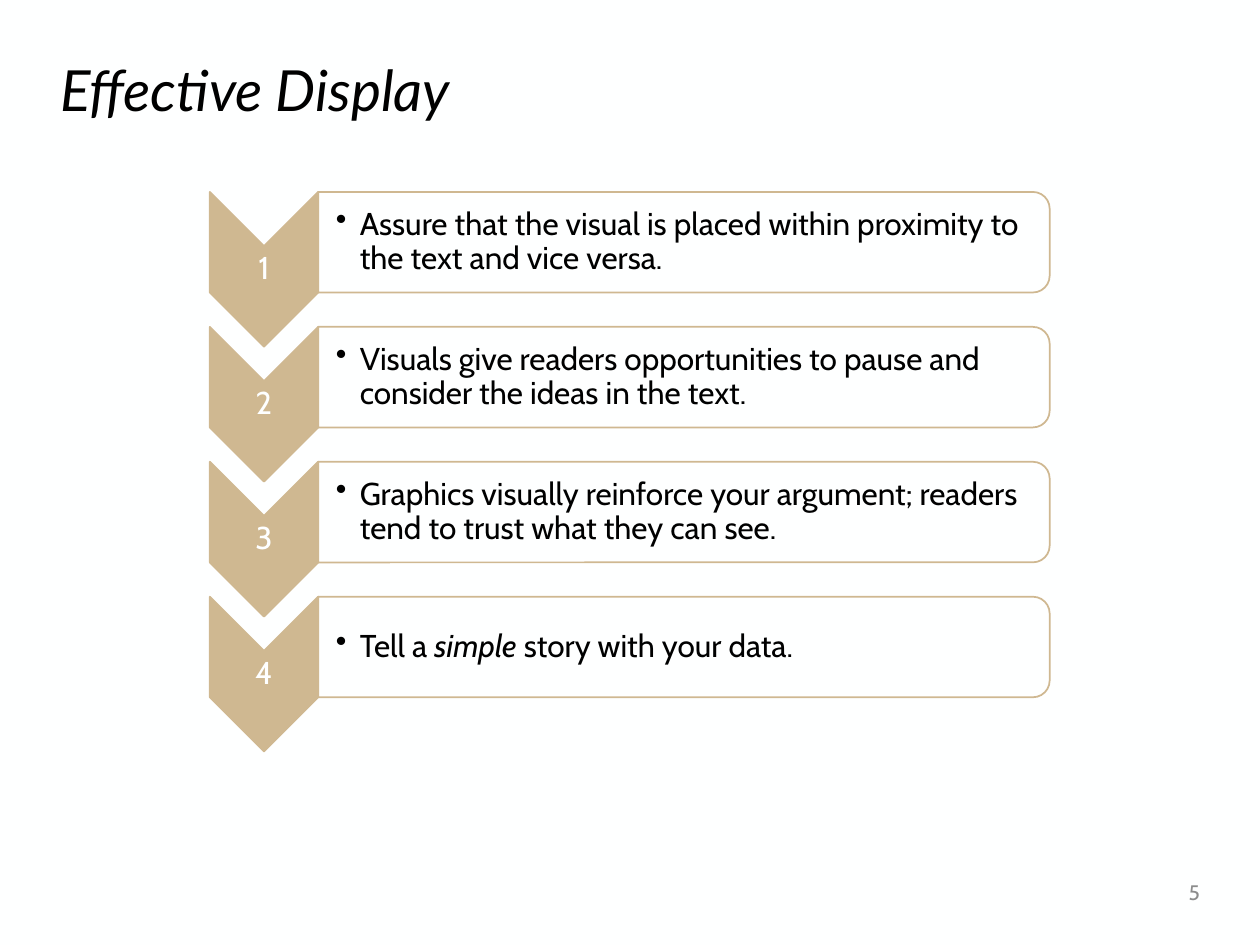
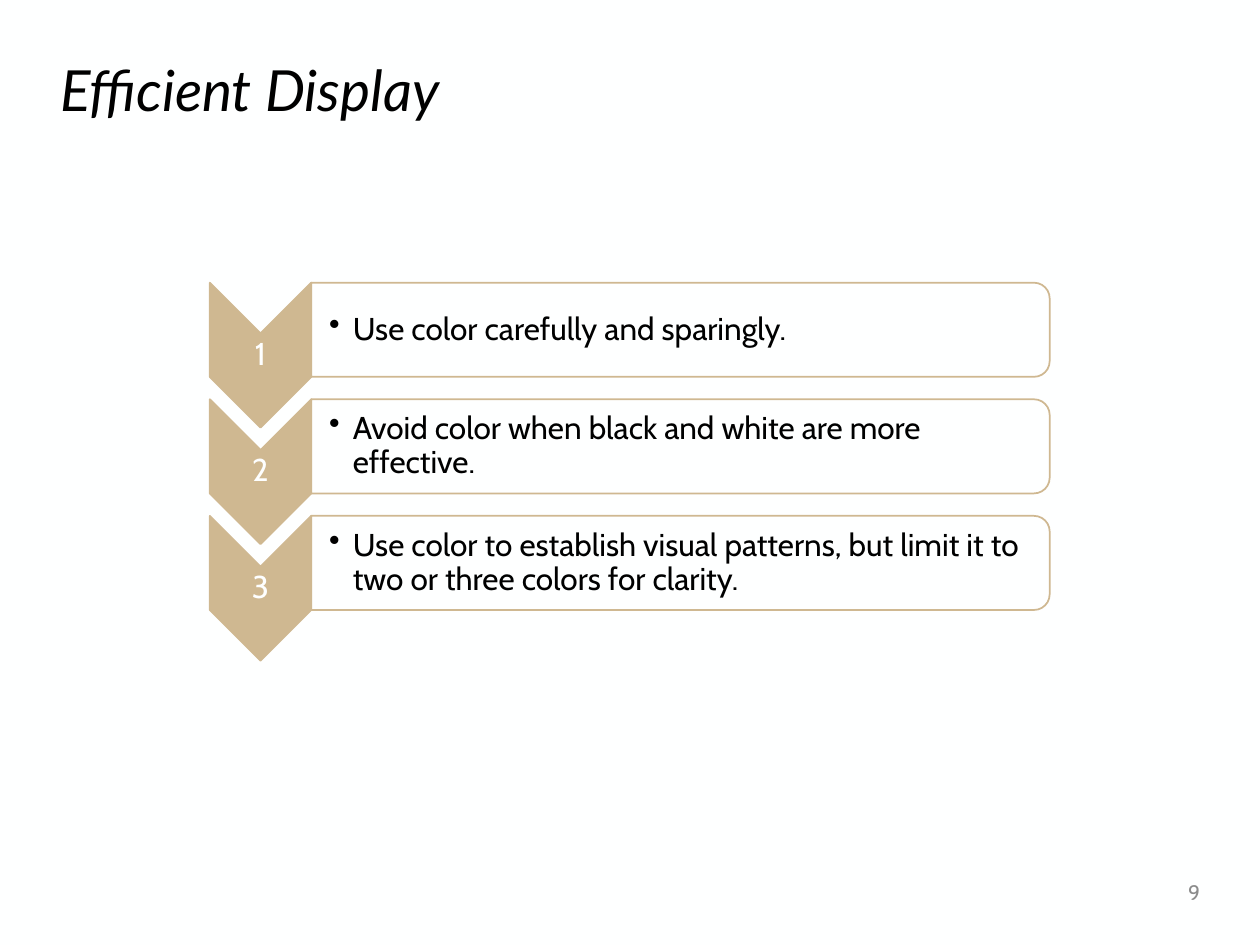
from lxml import etree
from pptx import Presentation
from pptx.dml.color import RGBColor
from pptx.enum.shapes import MSO_SHAPE
from pptx.enum.text import MSO_ANCHOR, PP_ALIGN
from pptx.oxml.ns import qn
from pptx.util import Cm, Pt

CHEVRON = MSO_SHAPE.CHEVRON
PANEL = MSO_SHAPE.ROUND_2_SAME_RECTANGLE
MIDDLE = MSO_ANCHOR.MIDDLE
LEFT, CENTER, RIGHT = PP_ALIGN.LEFT, PP_ALIGN.CENTER, PP_ALIGN.RIGHT

PAPER, TAN, INK, GRAY = "FEFFFF", "CFB891", "000000", "8C8C8C"
HEADING_FONT, BODY_FONT = "Lato", "Cabin"
TITLE_BOX = (0.97, 1.07, 23.47, 1.63)
NUMBER_BOX = (21.39, 17.48, 3.05, 1.02)
STEPS_LEFT, STEPS_WIDTH = 4.23, 16.93
CHEVRON_RATIO, PANEL_RATIO = 0.7, 0.65
PANEL_MARGIN, BULLET_INDENT = 0.1, 0.48
DEFAULT_INSETS = (0.25, 0.13, 0.25, 0.13)
NUMBER_INSETS = (0.03, 0.03, 0.03, 0.03)
PANEL_INSETS = (0.36, 0.03, 0.03, 0.03)

SLIDES = [
    {
        "title": "Effective Display", "page": "5",
        "top": 3.87, "height": 3.12, "pitch": 2.72,
        "steps": [
            ["Assure that the visual is placed within proximity to the text and vice versa."],
            ["Visuals give readers opportunities to pause and consider the ideas in the text."],
            ["Graphics visually reinforce your argument; readers tend to trust what they can see."],
            ["Tell a ", "simple", " story with your data."],
        ],
    },
    {
        "title": "Efficient Display", "page": "9",
        "top": 5.7, "height": 2.92, "pitch": 2.35,
        "steps": [
            ["Use color carefully and sparingly."],
            ["Avoid color when black and white are more effective."],
            ["Use color to establish visual patterns, but limit it to two or three colors for clarity."],
        ],
    },
]


def rgb(value):
    """Turn a hex string into a colour."""
    return RGBColor.from_string(value)


def add_text(slide, box, runs, size, color, font=BODY_FONT, align=LEFT,
             insets=DEFAULT_INSETS, spacing=0.9, italic=None, bullet=False):
    """Write one paragraph in a box; every second run is italic."""
    frame = slide.shapes.add_textbox(*map(Cm, box)).text_frame
    frame.word_wrap = True
    frame.vertical_anchor = MIDDLE
    (frame.margin_left, frame.margin_top,
     frame.margin_right, frame.margin_bottom) = map(Cm, insets)
    paragraph = frame.paragraphs[0]
    paragraph.alignment = align
    paragraph.line_spacing = spacing
    if bullet:
        properties = paragraph._p.get_or_add_pPr()
        properties.set("marL", str(Cm(BULLET_INDENT)))
        properties.set("indent", str(-Cm(BULLET_INDENT)))
        etree.SubElement(properties, qn("a:buChar"), char="•")
    paragraph.font.size = Pt(size)
    paragraph.font.name = font
    paragraph.font.color.rgb = rgb(color)
    paragraph.font.italic = italic
    for index, text in enumerate(runs):
        run = paragraph.add_run()
        run.text = text
        if index % 2:
            run.font.italic = True


def add_turned_shape(slide, kind, box, fill):
    """Draw a shape turned a quarter clockwise so that it fills the box."""
    left, top, width, height = box
    shift = (width - height) / 2
    shape = slide.shapes.add_shape(
        kind, Cm(left + shift), Cm(top - shift), Cm(height), Cm(width))
    shape.rotation = 90
    shape.shadow.inherit = False
    shape.fill.solid()
    shape.fill.fore_color.rgb = rgb(fill)
    shape.line.color.rgb = rgb(TAN)
    shape.line.width = Pt(1)
    return shape


def add_step(slide, box, number, runs):
    """Place a numbered chevron and its bulleted panel in a box."""
    left, top, width, height = box
    chevron_width = height * CHEVRON_RATIO
    add_turned_shape(slide, CHEVRON, (left, top, chevron_width, height), TAN)
    add_text(slide, (left, top + chevron_width / 2, chevron_width, height - chevron_width),
             [str(number)], 18, PAPER, align=CENTER, insets=NUMBER_INSETS)

    panel_left, panel_width = left + chevron_width, width - chevron_width
    panel_height = height * PANEL_RATIO
    panel = add_turned_shape(
        slide, PANEL, (panel_left, top, panel_width, panel_height), PAPER)
    fill_color = panel._element.spPr.find(qn("a:solidFill"))[0]
    etree.SubElement(fill_color, qn("a:alpha"), val="90000")
    add_text(slide, (panel_left, top + PANEL_MARGIN, panel_width - PANEL_MARGIN,
                     panel_height - 2 * PANEL_MARGIN),
             runs, 18, INK, insets=PANEL_INSETS, bullet=True)


def add_steps_slide(deck, title, page, top, height, pitch, steps):
    """Build a slide with a title, a column of steps and a page number."""
    slide = deck.slides.add_slide(deck.slide_layouts[6])
    slide.background.fill.solid()
    slide.background.fill.fore_color.rgb = rgb(PAPER)
    add_text(slide, TITLE_BOX, [title], 32.4, INK, font=HEADING_FONT, italic=True)
    add_text(slide, NUMBER_BOX, [page], 12, GRAY, align=RIGHT, spacing=1.0)
    for index, runs in enumerate(steps):
        box = (STEPS_LEFT, top + index * pitch, STEPS_WIDTH, height)
        add_step(slide, box, index + 1, runs)


def main():
    """Build and save the presentation."""
    deck = Presentation()
    deck.slide_width, deck.slide_height = Cm(25.4), Cm(19.05)
    for content in SLIDES:
        add_steps_slide(deck, **content)
    deck.save("out.pptx")


if __name__ == "__main__":
    main()
